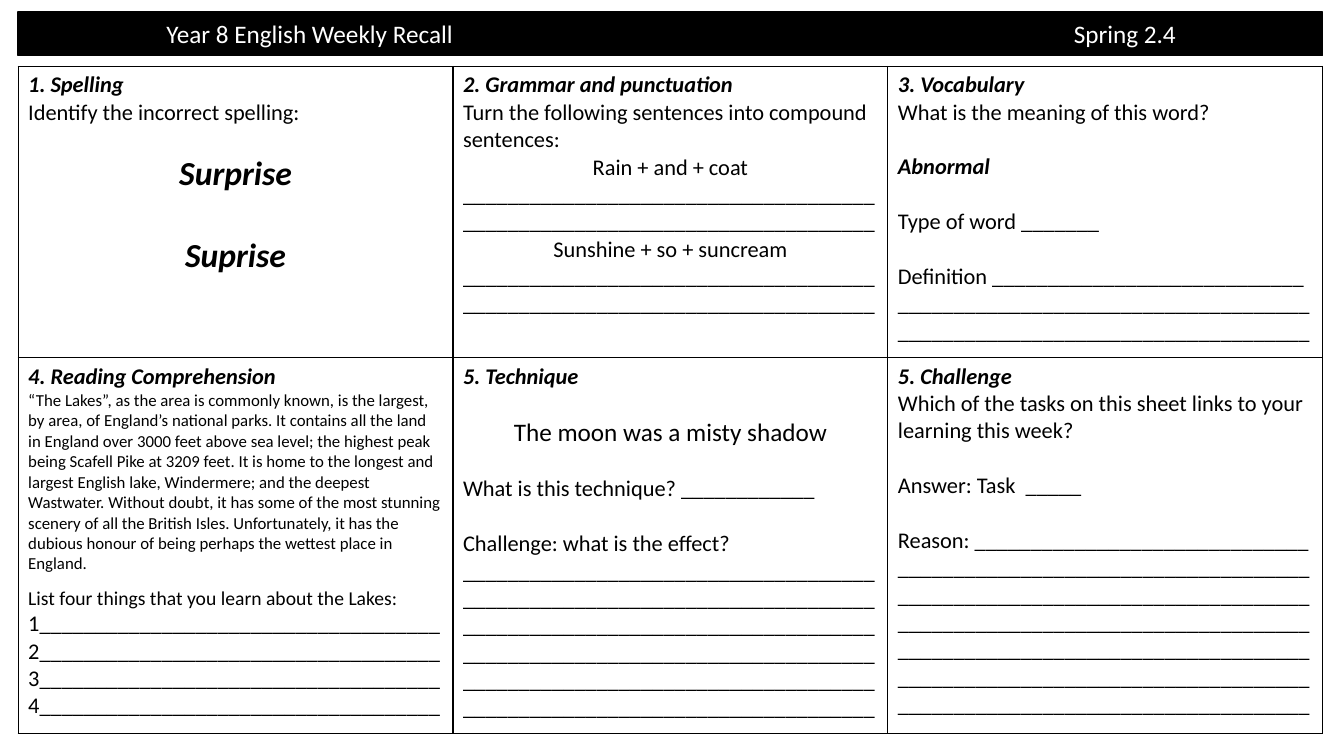
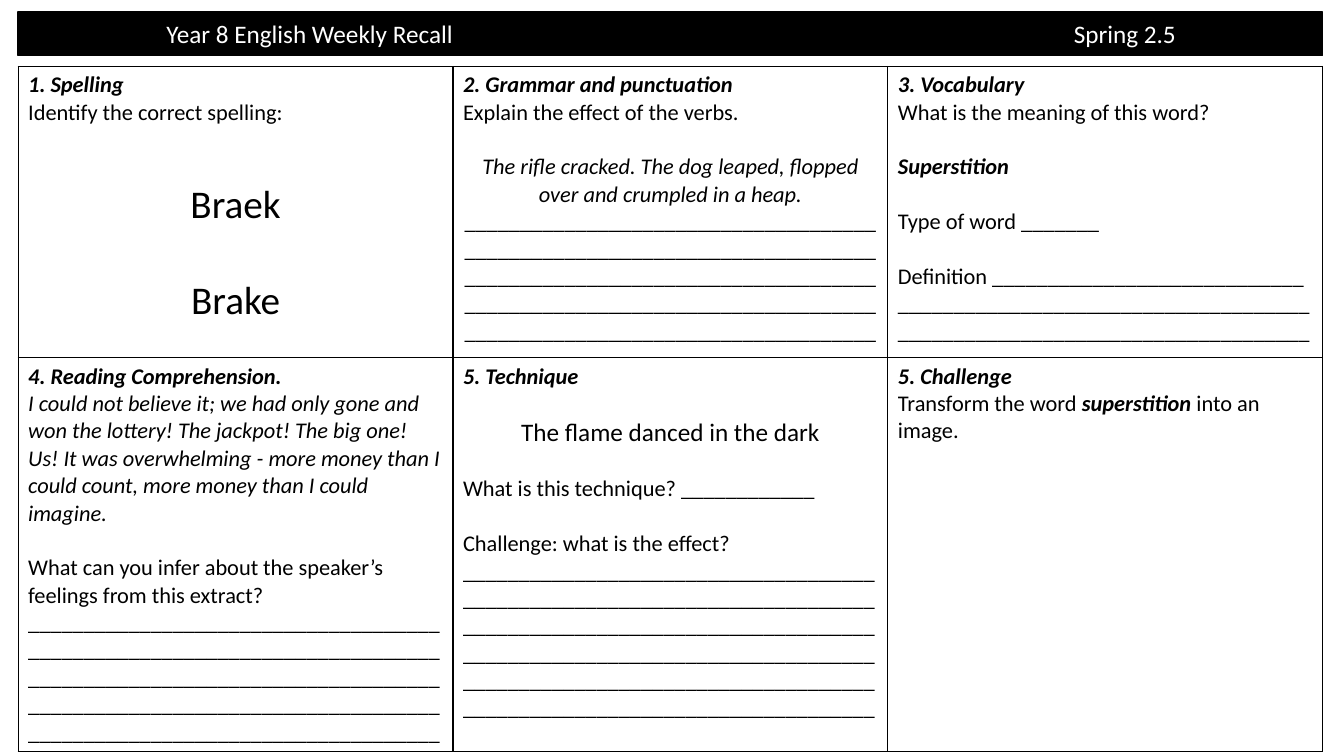
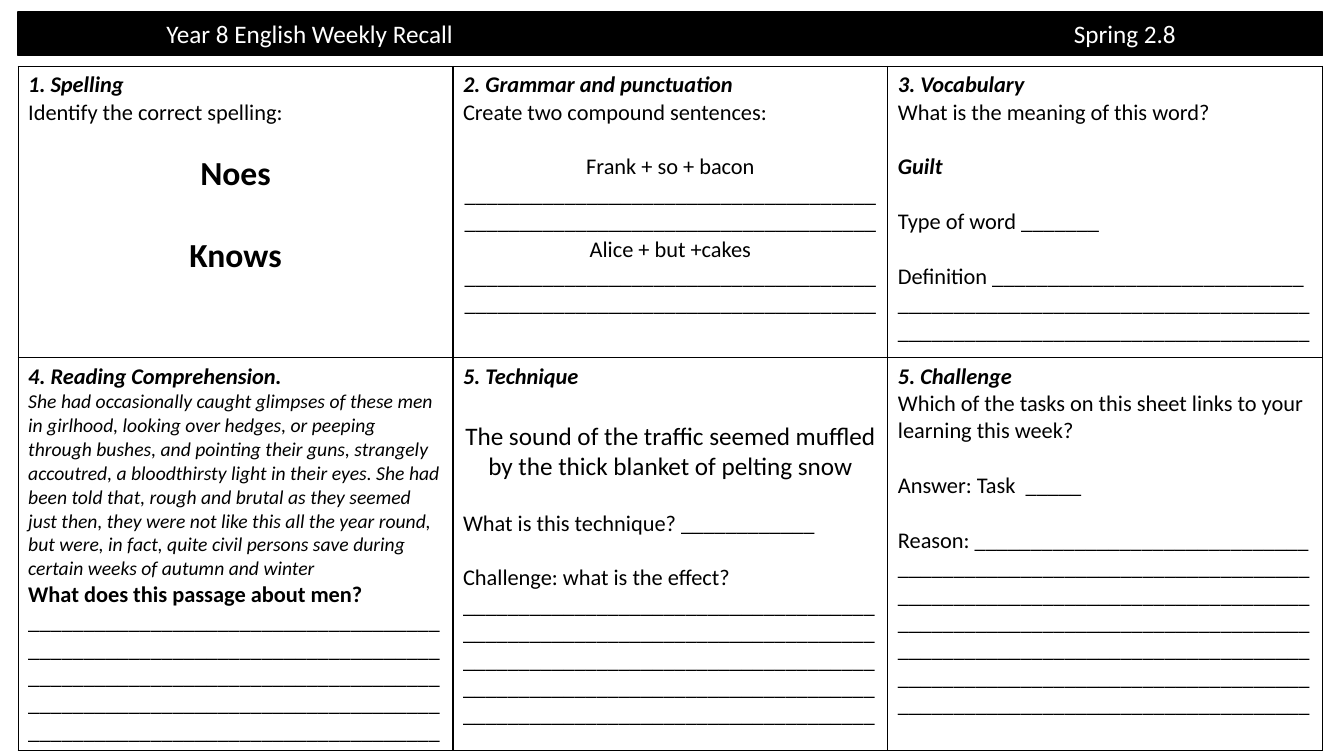
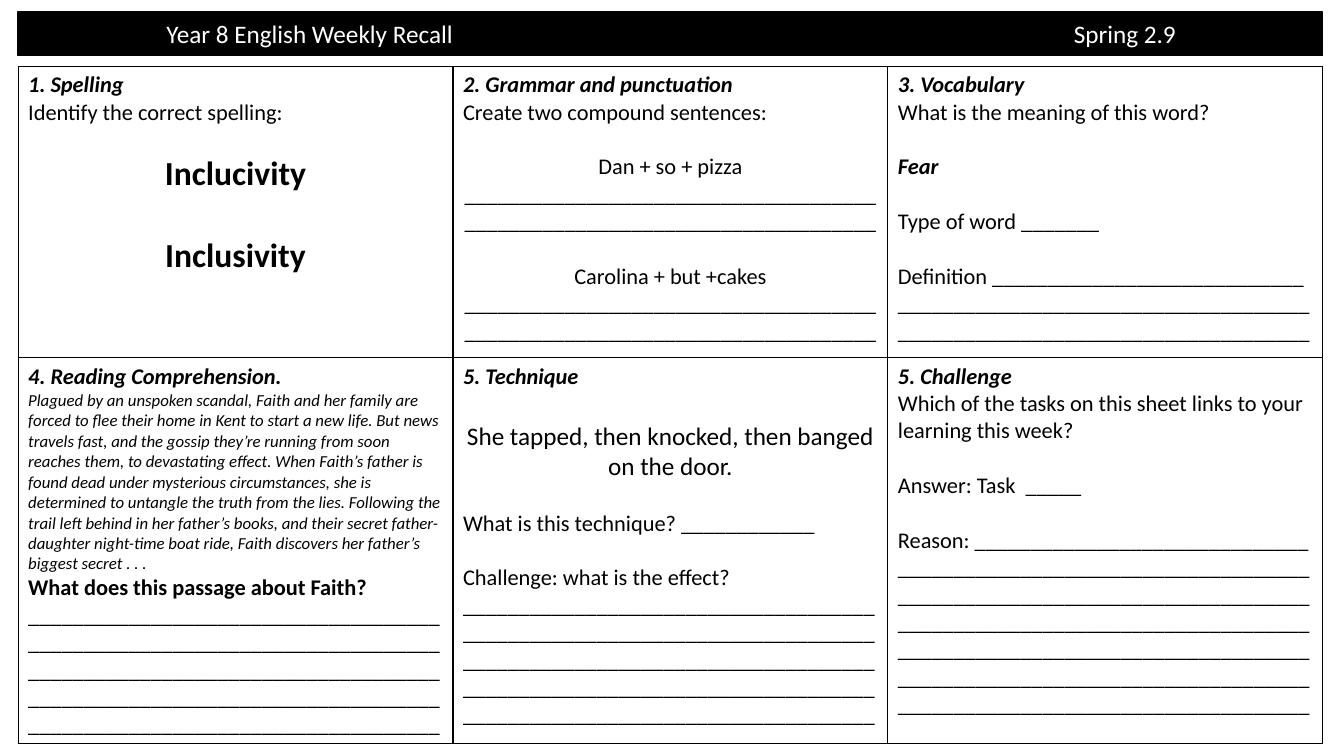
from dataclasses import dataclass

from lxml.etree import SubElement
from pptx import Presentation
from pptx.dml.color import RGBColor
from pptx.enum.shapes import MSO_SHAPE
from pptx.enum.text import MSO_ANCHOR, PP_ALIGN
from pptx.oxml.ns import qn
from pptx.util import Inches, Pt

COLORS = {"ink": "000000", "paper": "FFFFFF"}
FONT = "Calibri"
LINE_HEIGHT = 1.22  # height of a Calibri line as a share of its size

SLIDE_W, SLIDE_H = 13.33, 7.5
LEFT, WIDTH = 0.18, 12.94
BAR_TOP, BAR_H = 0.12, 0.43
TITLE_INDENT, WEEK_TAB = 1.47, 9
GRID_TOP, GRID_H = 0.66, 6.72
ROW_HEIGHTS = (2.89, 3.73)
COLUMNS = 3

RULE = "_" * 37  # one full writing line


@dataclass
class Para:
    """A paragraph; gap is the size of the empty line above it, in points."""
    text: str
    size: int = 16
    bold: bool = False
    italic: bool = False
    center: bool = False
    gap: int = 0
    line_spacing: float | None = None
    emphasis: str = ""


@dataclass
class Week:
    term: str
    spelling: list[Para]
    grammar: list[Para]
    word: str
    reading: list[Para]
    technique: list[Para]
    challenge: list[Para]


def color(name: str) -> RGBColor:
    return RGBColor.from_string(COLORS[name])


def heading(text: str) -> Para:
    return Para(text, bold=True, italic=True)


def centered(text: str, **style) -> Para:
    return Para(text, center=True, **style)


def spelling(kind: str, first: str, second: str, size: int = 24, bold: bool = True,
             italic: bool = False, gap: int = 16) -> list[Para]:
    style = dict(size=size, bold=bold, italic=italic)
    return [Para(f"Identify the {kind} spelling:"),
            centered(first, gap=gap, **style),
            centered(second, gap=size, **style)]


def compound(first: str, second: str, second_gap: int = 0) -> list[Para]:
    return [Para("Create two compound sentences:"),
            centered(first, gap=16), centered(RULE * 2),
            centered(second, gap=second_gap), centered(RULE * 2)]


def passage(text: str, size: int, subject: str) -> list[Para]:
    return [Para(text, size=size, italic=True),
            Para(f"What does this passage about {subject}?", bold=True),
            Para(RULE * 5)]


def vocabulary(word: str) -> list[Para]:
    return [Para("What is the meaning of this word?"),
            Para(word, bold=True, italic=True, gap=16),
            Para("Type of word " + "_" * 7, gap=16),
            Para("Definition " + "_" * 28 + " " + RULE * 2, gap=16)]


def technique(example: str, lines: int, gap: int) -> list[Para]:
    return [centered(example, size=18, gap=gap),
            Para("What is this technique? " + "_" * 12, gap=16),
            Para("Challenge: what is the effect? " + RULE * lines, gap=16)]


LINK_TASK = [
    Para("Which of the tasks on this sheet links to your learning this week?"),
    Para("Answer: Task  _____", gap=16),
    Para("Reason: " + "_" * 30 + " " + RULE * 6, gap=16),
]

WEEKS = [
    Week(
        "Spring 2.4",
        spelling("incorrect", "Surprise", "Suprise", italic=True),
        [Para("Turn the following sentences into compound sentences:"),
         centered("Rain + and + coat"), Para(RULE * 2),
         centered("Sunshine + so + suncream"), Para(RULE * 2)],
        "Abnormal",
        [heading("4. Reading Comprehension"),
         Para("“The Lakes”, as the area is commonly known, is the largest, by area, of "
              "England’s national parks. It contains all the land in England over 3000 feet "
              "above sea level; the highest peak being Scafell Pike at 3209 feet. It is home "
              "to the longest and largest English lake, Windermere; and the deepest "
              "Wastwater. Without doubt, it has some of the most stunning scenery of all the "
              "British Isles. Unfortunately, it has the dubious honour of being perhaps the "
              "wettest place in England.", size=12),
         Para("List four things that you learn about the Lakes:", size=14, line_spacing=1.5),
         Para("".join(f"{n}{RULE[1:]}" for n in range(1, 5)))],
        technique("The moon was a misty shadow", lines=6, gap=16),
        LINK_TASK,
    ),
    Week(
        "Spring 2.5",
        spelling("correct", "Braek", "Brake", size=28, bold=False, gap=32),
        [Para("Explain the effect of the verbs."),
         centered("The rifle cracked. The dog leaped, flopped over and crumpled in a heap.",
                  italic=True, gap=16),
         centered(RULE * 5)],
        "Superstition",
        [heading("4. Reading Comprehension."),
         Para("I could not believe it; we had only gone and won the lottery! The jackpot! The "
              "big one! Us! It was overwhelming - more money than I could count, more money "
              "than I could imagine.", italic=True),
         Para("What can you infer about the speaker’s feelings from this extract?", gap=16),
         Para(RULE * 5)],
        technique("The flame danced in the dark", lines=6, gap=16),
        [Para("Transform the word superstition into an image.", emphasis="superstition")],
    ),
    Week(
        "Spring 2.8",
        spelling("correct", "Noes", "Knows"),
        compound("Frank + so + bacon", "Alice + but +cakes"),
        "Guilt",
        [heading("4. Reading Comprehension."),
         *passage("She had occasionally caught glimpses of these men in girlhood, looking over "
                  "hedges, or peeping through bushes, and pointing their guns, strangely "
                  "accoutred, a bloodthirsty light in their eyes. She had been told that, rough "
                  "and brutal as they seemed just then, they were not like this all the year "
                  "round, but were, in fact, quite civil persons save during certain weeks of "
                  "autumn and winter", 14, "men")],
        technique("The sound of the traffic seemed muffled by the thick blanket of pelting snow",
                  lines=5, gap=18),
        LINK_TASK,
    ),
    Week(
        "Spring 2.9",
        spelling("correct", "Inclucivity", "Inclusivity"),
        compound("Dan + so + pizza", "Carolina + but +cakes", second_gap=16),
        "Fear",
        [heading("4. Reading Comprehension."),
         *passage("Plagued by an unspoken scandal, Faith and her family are forced to flee "
                  "their home in Kent to start a new life. But news travels fast, and the "
                  "gossip they’re running from soon reaches them, to devastating effect. When "
                  "Faith’s father is found dead under mysterious circumstances, she is "
                  "determined to untangle the truth from the lies. Following the trail left "
                  "behind in her father’s books, and their secret father-daughter night-time "
                  "boat ride, Faith discovers her father’s biggest secret . . .", 12, "Faith")],
        technique("She tapped, then knocked, then banged on the door.", lines=5, gap=18),
        LINK_TASK,
    ),
]


def set_font(font, size: int, color_name: str) -> None:
    font.name, font.size = FONT, Pt(size)
    font.color.rgb = color(color_name)


def write(tf, paras: list[Para]) -> None:
    for i, para in enumerate(paras):
        p = tf.add_paragraph() if i else tf.paragraphs[0]
        p.alignment = PP_ALIGN.CENTER if para.center else PP_ALIGN.LEFT
        if para.gap:
            p.space_before = Pt(round(para.gap * LINE_HEIGHT, 1))
        if para.line_spacing:
            p.line_spacing = para.line_spacing
        set_font(p.font, para.size, "ink")
        p.font.bold, p.font.italic = para.bold, para.italic
        parts = para.text.partition(para.emphasis) if para.emphasis else (para.text,)
        for part in parts:
            r = p.add_run()
            r.text = part
            if part == para.emphasis:
                r.font.bold = r.font.italic = True


def set_borders(cell) -> None:
    tc_pr = cell._tc.get_or_add_tcPr()
    for side in ("lnL", "lnR", "lnT", "lnB"):
        ln = SubElement(tc_pr, qn(f"a:{side}"), w=str(Pt(1)))
        fill = SubElement(ln, qn("a:solidFill"))
        SubElement(fill, qn("a:srgbClr"), val=COLORS["ink"])


def add_bar(slide, term: str) -> None:
    sp = slide.shapes.add_shape(MSO_SHAPE.RECTANGLE, Inches(LEFT), Inches(BAR_TOP),
                                Inches(WIDTH), Inches(BAR_H))
    sp.shadow.inherit = False
    sp.fill.solid()
    sp.fill.fore_color.rgb = sp.line.color.rgb = color("ink")
    sp.line.width = Pt(1)
    tf = sp.text_frame
    tf.word_wrap = True
    tf.vertical_anchor = MSO_ANCHOR.MIDDLE
    tf.margin_left = Inches(TITLE_INDENT)
    p = tf.paragraphs[0]
    p.alignment = PP_ALIGN.LEFT
    tabs = SubElement(p._p.get_or_add_pPr(), qn("a:tabLst"))
    SubElement(tabs, qn("a:tab"), pos=str(Inches(WEEK_TAB)), algn="l")
    set_font(p.font, 18, "paper")
    p.add_run().text = f"Year 8 English Weekly Recall\t{term}"


def add_tasks(slide, tasks: list[list[Para]]) -> None:
    frame = slide.shapes.add_table(len(ROW_HEIGHTS), COLUMNS, Inches(LEFT), Inches(GRID_TOP),
                                   Inches(WIDTH), Inches(GRID_H))
    table = frame.table
    table.first_row = table.horz_banding = False
    for row, height in zip(table.rows, ROW_HEIGHTS):
        row.height = Inches(height)
    frame.height = Inches(GRID_H)
    for cell, paras in zip(table.iter_cells(), tasks):
        set_borders(cell)
        cell.fill.background()
        write(cell.text_frame, paras)


def add_week(prs, week: Week) -> None:
    slide = prs.slides.add_slide(prs.slide_layouts[6])
    add_tasks(slide, [
        [heading("1. Spelling"), *week.spelling],
        [heading("2. Grammar and punctuation"), *week.grammar],
        [heading("3. Vocabulary"), *vocabulary(week.word)],
        week.reading,
        [heading("5. Technique"), *week.technique],
        [heading("5. Challenge"), *week.challenge],
    ])
    add_bar(slide, week.term)


def main() -> None:
    prs = Presentation()
    prs.slide_width, prs.slide_height = Inches(SLIDE_W), Inches(SLIDE_H)
    for week in WEEKS:
        add_week(prs, week)
    prs.save("out.pptx")


if __name__ == "__main__":
    main()
